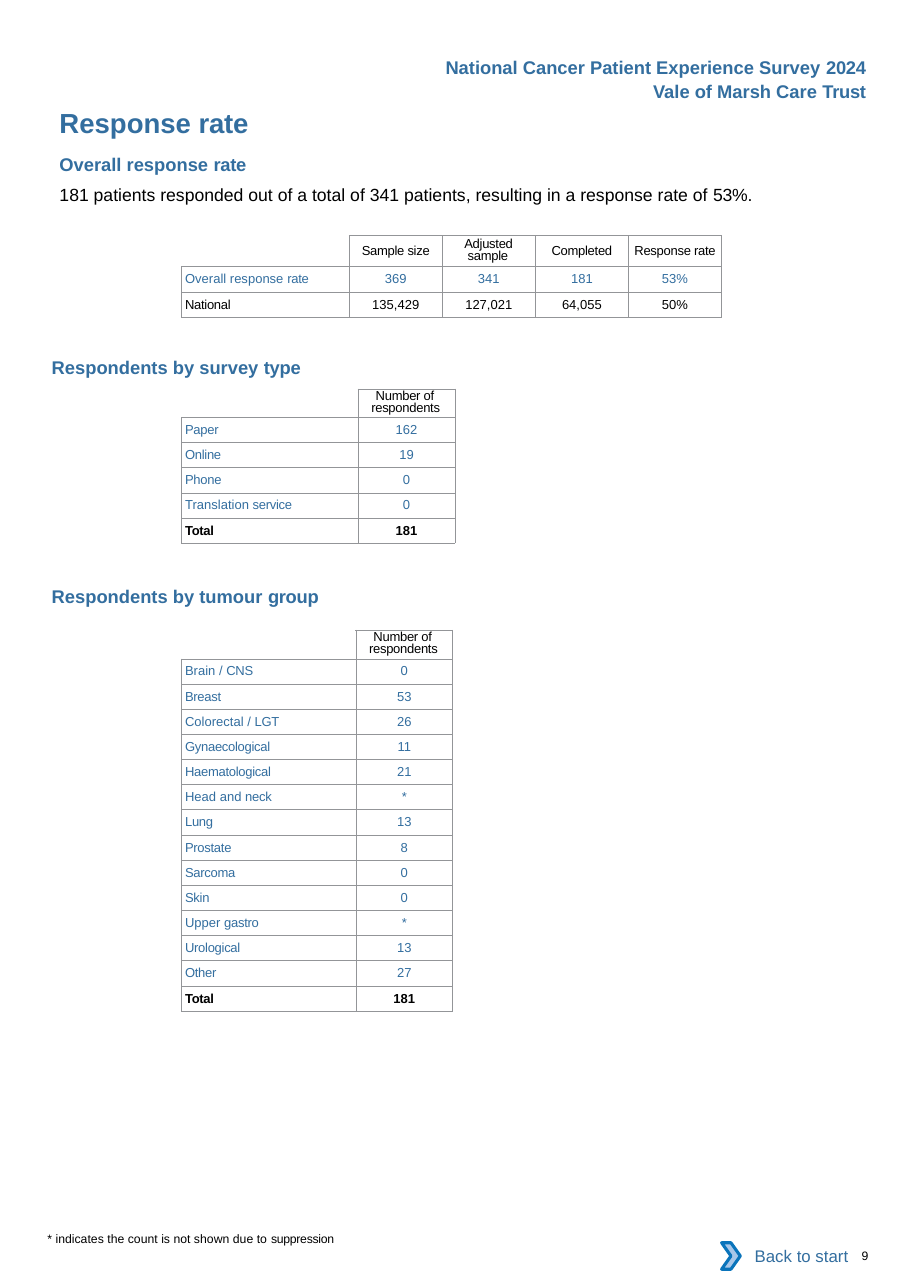
import dataclasses

import pptx
import pptx.dml.color
import pptx.enum.shapes
import pptx.enum.text
import pptx.oxml.ns
import pptx.util
from lxml import etree

PX = 9144
ALIGN = pptx.enum.text.PP_ALIGN
MIDDLE = pptx.enum.text.MSO_ANCHOR.MIDDLE
SHAPE = pptx.enum.shapes.MSO_SHAPE
qn = pptx.oxml.ns.qn


@dataclasses.dataclass(frozen=True)
class Theme:
    """Colours and type sizes of the report page."""
    font: str = "Arial"
    blue: str = "336E9F"
    black: str = "000000"
    white: str = "FFFFFF"
    rule: str = "939598"
    chevron: str = "A8C7E9"
    chevron_line: str = "0A74BB"
    title: float = 18
    heading: float = 12
    body: float = 11.5
    link: float = 11
    table: float = 8.5
    table_leading: float = 7.6
    note: float = 8


THEME = Theme()


def rgb(value):
    """Return a colour object for a hex value."""
    return pptx.dml.color.RGBColor.from_string(value)


def emu(*lengths):
    """Turn px lengths into EMU."""
    return [pptx.util.Emu(round(n * PX)) for n in lengths]


def write(tf, text, size, colour, bold=False, align=ALIGN.LEFT, tight=True):
    """Write one paragraph, with its last word set slightly tighter."""
    p = tf.paragraphs[0]
    p.alignment = align
    p.font.name = THEME.font
    p.font.size = pptx.util.Pt(size)
    p.font.bold = bold
    p.font.color.rgb = rgb(colour)
    head, space, last = text.rpartition(" ") if tight else (text, "", "")
    for part, spacing in ((head + space, "0"), (last, "-20")):
        if part:
            r = p.add_run()
            r.text = part
            r._r.get_or_add_rPr().set("spc", spacing)
    return p


def add_text(s, box, text, size, colour, bold=False):
    """Add a left-aligned text box without insets."""
    tf = s.shapes.add_textbox(*emu(*box)).text_frame
    tf.word_wrap = True
    tf.margin_left = tf.margin_right = tf.margin_top = tf.margin_bottom = 0
    write(tf, text, size, colour, bold)


def add_header(s, box, lines):
    """Stack the right-aligned report lines from the top of the box."""
    x, y, w, h = box
    for i, line in enumerate(lines):
        tf = s.shapes.add_textbox(*emu(x, y + i * h, w, 30)).text_frame
        tf.word_wrap = False
        write(tf, line, THEME.heading, THEME.blue, True, ALIGN.RIGHT)


def style_cell(cell, sides):
    """Give a cell no insets, no fill and rules on the given sides."""
    cell.margin_left = cell.margin_right = cell.margin_top = cell.margin_bottom = 0
    cell.vertical_anchor = MIDDLE
    tc_pr = cell._tc.get_or_add_tcPr()
    for side in "LRTB":
        ln = etree.SubElement(tc_pr, qn("a:ln" + side), w="6350")
        if side in sides:
            fill = etree.SubElement(ln, qn("a:solidFill"))
            etree.SubElement(fill, qn("a:srgbClr"), val=THEME.rule)
        else:
            etree.SubElement(ln, qn("a:noFill"))
    cell.fill.background()


def add_head_cell(cell, text, indent):
    """Write a column heading, wrapped on two lines if it has an indent."""
    style_cell(cell, "LRTB")
    align = ALIGN.LEFT if indent else ALIGN.CENTER
    p = write(cell.text_frame, text, THEME.table, THEME.black, align=align)
    for r in p.runs:
        r._r.get_or_add_rPr().set("spc", "-20")
    if indent:
        p.line_spacing = pptx.util.Pt(THEME.table_leading)
        left, first = emu(*indent)
        p._p.get_or_add_pPr().set("marL", str(left))
        p._p.get_or_add_pPr().set("indent", str(first))


def add_counts(s, box, head_h, label_w, columns, rows):
    """Add a table of counts with an open corner and a black last row."""
    x, y, w, h = box
    table = s.shapes.add_table(len(rows) + 1, len(columns) + 1, *emu(*box)).table
    table.first_row = table.horz_banding = False
    widths = [label_w] + [(w - label_w) / len(columns)] * len(columns)
    for column, width in zip(table.columns, emu(*widths)):
        column.width = width
    heights = [head_h] + [(h - head_h) / len(rows)] * len(rows)
    for row, height in zip(table.rows, emu(*heights)):
        row.height = height

    corner = table.cell(0, 0)
    style_cell(corner, "RB")
    size = str(round(THEME.table * 100))
    etree.SubElement(corner.text_frame.paragraphs[0]._p, qn("a:endParaRPr"), sz=size)
    for j, (text, indent) in enumerate(columns, 1):
        add_head_cell(table.cell(0, j), text, indent)

    for i, values in enumerate(rows, 1):
        colour = THEME.black if i == len(rows) else THEME.blue
        for j, value in enumerate(values):
            cell = table.cell(i, j)
            style_cell(cell, "LRTB")
            if j == 0:
                cell.margin_left = emu(3)[0]
            write(cell.text_frame, value, THEME.table, colour, values[0] == "Total",
                  ALIGN.CENTER if j else ALIGN.LEFT, tight=j == 0)


def add_back_link(s, box):
    """Add the link label with a chevron on its left edge."""
    x, y, w, h = box
    label = s.shapes.add_shape(SHAPE.RECTANGLE, *emu(x, y, w, h))
    label.shadow.inherit = False
    label.fill.solid()
    label.fill.fore_color.rgb = rgb(THEME.white)
    label.line.fill.background()
    label.text_frame.vertical_anchor = MIDDLE
    write(label.text_frame, "Back to start", THEME.link, THEME.blue,
          align=ALIGN.RIGHT, tight=False)
    chevron = s.shapes.add_shape(SHAPE.CHEVRON, *emu(x - 7, y + 9, 17, 24))
    chevron.shadow.inherit = False
    chevron.fill.solid()
    chevron.fill.fore_color.rgb = rgb(THEME.chevron)
    chevron.line.color.rgb = rgb(THEME.chevron_line)
    chevron.line.width = pptx.util.Pt(2)


def main():
    """Build the response rate page."""
    prs = pptx.Presentation()
    prs.slide_width, prs.slide_height = emu(826, 1169)
    s = prs.slides.add_slide(prs.slide_layouts[6])
    blue, black = THEME.blue, THEME.black

    add_header(s, (392, 46, 404, 22),
               ["National Cancer Patient Experience Survey 2024", "Vale of Marsh Care Trust"])
    add_text(s, (54, 96, 413, 30), "Response rate", THEME.title, blue, True)
    add_text(s, (54, 139, 413, 20), "Overall response rate", THEME.heading, blue, True)
    add_text(s, (54, 167, 720, 19),
             "181 patients responded out of a total of 341 patients, "
             "resulting in a response rate of 53%.", THEME.body, black)
    add_counts(s, (165, 214, 490, 74), 28, 152,
               [("Sample size", None), ("Adjusted sample", (23, -3)),
                ("Completed", None), ("Response rate", None)],
               [("Overall response rate", "369", "341", "181", "53%"),
                ("National", "135,429", "127,021", "64,055", "50%")])

    respondents = [("Number of respondents", (12, 4))]
    add_text(s, (47, 323, 230, 20), "Respondents by survey type", THEME.heading, blue, True)
    add_counts(s, (165, 353, 248, 140), 26, 160, respondents,
               [("Paper", "162"), ("Online", "19"), ("Phone", "0"),
                ("Translation service", "0"), ("Total", "181")])
    add_text(s, (47, 531, 246, 20), "Respondents by tumour group", THEME.heading, blue, True)
    add_counts(s, (165, 572, 246, 346), 26, 158, respondents,
               [("Brain / CNS", "0"), ("Breast", "53"), ("Colorectal / LGT", "26"),
                ("Gynaecological", "11"), ("Haematological", "21"), ("Head and neck", "*"),
                ("Lung", "13"), ("Prostate", "8"), ("Sarcoma", "0"), ("Skin", "0"),
                ("Upper gastro", "*"), ("Urological", "13"), ("Other", "27"),
                ("Total", "181")])

    add_text(s, (43, 1118, 275, 13),
             "* indicates the count is not shown due to suppression", THEME.note, black)
    add_back_link(s, (662, 1119, 118, 42))
    add_text(s, (782, 1133, 40, 13), "9", THEME.note, black)
    prs.save("out.pptx")


if __name__ == "__main__":
    main()
